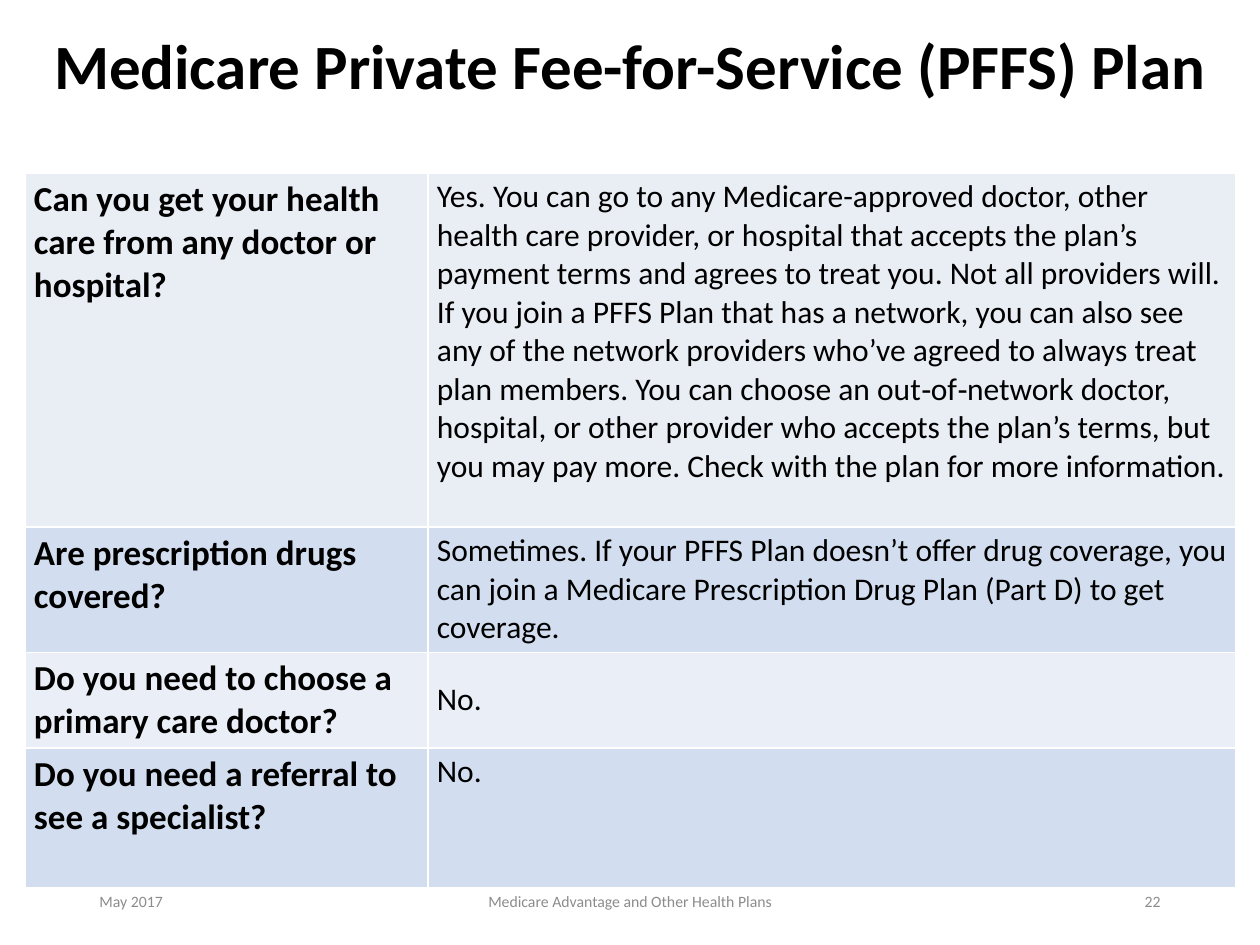
"""Build the Medicare Private Fee-for-Service plan slide."""
from dataclasses import dataclass

from lxml.etree import SubElement
from pptx import Presentation
from pptx.dml.color import RGBColor
from pptx.enum.text import MSO_ANCHOR as Anchor, PP_ALIGN as Align
from pptx.oxml.ns import qn
from pptx.util import Pt

SCALE = 914400 / 126


@dataclass(frozen=True)
class Theme:
    font: str = "Calibri"
    ink: str = "000000"
    muted: str = "8C8C8C"
    border: str = "FFFFFF"
    bands: tuple = ("E9EDF4", "D2DEEF", "EAEFF7", "D2DEEF")
    title_size: int = 36
    question_size: int = 20
    answer_size: int = 18
    footer_size: int = 9


THEME = Theme()
TITLE = "Medicare Private Fee-for-Service (PFFS) Plan"
TITLE_BOX = (0, -1, 1260, 140)
TABLE_ORIGIN = (25, 173)
COLUMN_WIDTHS = (403, 808)
CELL_MARGINS = {"margin_left": 9, "margin_right": 9, "margin_top": 5, "margin_bottom": 5}
QUESTIONS = [
    ("Can you get your health care from any doctor or hospital?",
     "Yes. You can go to any Medicare-approved doctor, other health care provider, "
     "or hospital that accepts the plan’s payment terms and agrees to treat you. "
     "Not all providers will. If you join a PFFS Plan that has a network, you can "
     "also see any of the network providers who’ve agreed to always treat plan "
     "members. You can choose an out‑of‑network doctor, hospital, or other provider "
     "who accepts the plan’s terms, but you may pay more. Check with the plan for "
     "more information.", 354, Anchor.TOP),
    ("Are prescription drugs covered?",
     "Sometimes. If your PFFS Plan doesn’t offer drug coverage, you can join a "
     "Medicare Prescription Drug Plan (Part D) to get coverage.", 125, Anchor.MIDDLE),
    ("Do you need to choose a primary care doctor?", "No.", 95, Anchor.MIDDLE),
    ("Do you need a referral to see a specialist?", "No.", 140, Anchor.TOP),
]
FOOTER_TOP, FOOTER_HEIGHT = 876, 50
FOOTERS = [
    ("May 2017", 87, 284, Align.LEFT),
    ("Medicare Advantage and Other Health Plans", 417, 426, Align.CENTER),
    ("22", 889, 284, Align.RIGHT),
]


def px(length):
    return round(length * SCALE)


def apply(target, values):
    for name, value in values.items():
        setattr(target, name, value)


def write(frame, text, size, color, bold=False, align=Align.LEFT):
    frame.word_wrap = True
    paragraph = frame.paragraphs[0]
    paragraph.alignment = align
    run = paragraph.add_run()
    run.text = text
    apply(run.font, {"name": THEME.font, "size": Pt(size), "bold": bold})
    run.font.color.rgb = RGBColor.from_string(color)
    return paragraph


def add_borders(cell):
    properties = cell._tc.get_or_add_tcPr()
    for side in ("lnL", "lnR", "lnT", "lnB"):
        line = SubElement(properties, qn(f"a:{side}"), w=str(Pt(1)))
        SubElement(SubElement(line, qn("a:solidFill")), qn("a:srgbClr"), val=THEME.border)


def place(shape, box):
    apply(shape, dict(zip(("left", "top", "width", "height"), map(px, box))))


def add_title(slide):
    title = slide.shapes.title
    place(title, TITLE_BOX)
    title.text_frame.vertical_anchor = Anchor.MIDDLE
    heading = write(title.text_frame, TITLE, THEME.title_size, THEME.ink, True, Align.CENTER)
    heading.line_spacing = 0.9


def add_questions(slide):
    box = (*TABLE_ORIGIN, sum(COLUMN_WIDTHS), sum(row[2] for row in QUESTIONS))
    table = slide.shapes.add_table(len(QUESTIONS), len(COLUMN_WIDTHS), *map(px, box)).table
    apply(table, {"first_row": False, "horz_banding": False})
    for column, width in zip(table.columns, COLUMN_WIDTHS):
        column.width = px(width)
    for row, (question, answer, height, anchor), band in zip(table.rows, QUESTIONS, THEME.bands):
        row.height = px(height)
        entries = ((question, THEME.question_size, True, Anchor.TOP),
                   (answer, THEME.answer_size, False, anchor))
        for cell, (text, size, bold, cell_anchor) in zip(row.cells, entries):
            apply(cell, {name: px(margin) for name, margin in CELL_MARGINS.items()})
            cell.vertical_anchor = cell_anchor
            add_borders(cell)
            cell.fill.solid()
            cell.fill.fore_color.rgb = RGBColor.from_string(band)
            write(cell.text_frame, text, size, THEME.ink, bold)


def add_footers(slide):
    for text, left, width, align in FOOTERS:
        box = (left, FOOTER_TOP, width, FOOTER_HEIGHT)
        footer = slide.shapes.add_textbox(*map(px, box)).text_frame
        footer.vertical_anchor = Anchor.MIDDLE
        write(footer, text, THEME.footer_size, THEME.muted, align=align)


def main():
    deck = Presentation()
    apply(deck, {"slide_width": px(1260), "slide_height": px(945)})
    slide = deck.slides.add_slide(deck.slide_layouts[5])
    add_title(slide)
    add_questions(slide)
    add_footers(slide)
    deck.save("out.pptx")


if __name__ == "__main__":
    main()
